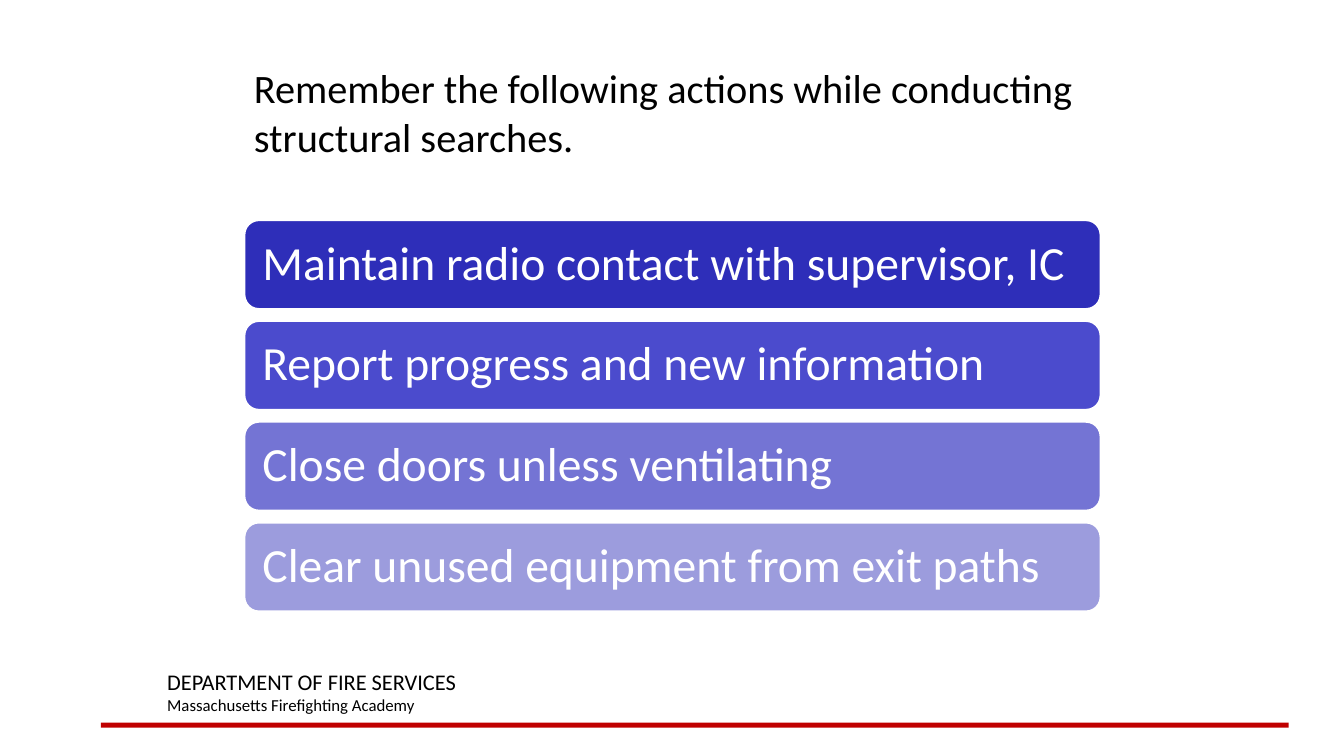
from pptx import Presentation
from pptx.dml.color import RGBColor
from pptx.enum.shapes import MSO_SHAPE
from pptx.enum.text import MSO_ANCHOR, PP_ALIGN
from pptx.util import Inches, Pt

FONT = "Calibri"
COLORS = {"text": "000000", "white": "FFFFFF", "rule": "C00000"}

# Action bars: one column, evenly spaced rows
LEFT, TOP, WIDTH, HEIGHT, PITCH = 2.42, 2.18, 8.5, 0.89, 1.0
ACTIONS = [
    ("Maintain radio contact with supervisor, IC", "2E2EB9"),
    ("Report progress and new information", "4B4BCD"),
    ("Close doors unless ventilating", "7474D4"),
    ("Clear unused equipment from exit paths", "9C9CDD"),
]


def rgb(value):
    return RGBColor.from_string(value)


def style(p, size, color):
    p.font.name = FONT
    p.font.size = Pt(size)
    p.font.color.rgb = rgb(color)


def add_text(s, box, lines):
    """Place a text box with one (text, size) pair per paragraph."""
    tf = s.shapes.add_textbox(*map(Inches, box)).text_frame
    tf.word_wrap = True
    for i, (text, size) in enumerate(lines):
        p = tf.add_paragraph() if i else tf.paragraphs[0]
        p.text = text
        style(p, size, COLORS["text"])


def add_block(s, kind, box, fill):
    sp = s.shapes.add_shape(kind, *map(Inches, box))
    sp.shadow.inherit = False
    sp.fill.solid()
    sp.fill.fore_color.rgb = rgb(fill)
    sp.line.fill.background()
    return sp


def add_action(s, row, text, fill):
    box = (LEFT, TOP + row * PITCH, WIDTH, HEIGHT)
    sp = add_block(s, MSO_SHAPE.ROUNDED_RECTANGLE, box, fill)
    sp.line.color.rgb = rgb(COLORS["white"])
    sp.line.width = Pt(2)
    tf = sp.text_frame
    tf.word_wrap = True
    tf.vertical_anchor = MSO_ANCHOR.MIDDLE
    tf.margin_left = tf.margin_right = Inches(0.14)
    tf.margin_top = tf.margin_bottom = 0
    p = tf.paragraphs[0]
    p.text = text
    p.alignment = PP_ALIGN.LEFT
    p.line_spacing = 0.9
    style(p, 34, COLORS["white"])


def main():
    prs = Presentation()
    prs.slide_width, prs.slide_height = Inches(13.33), Inches(7.5)
    s = prs.slides.add_slide(prs.slide_layouts[6])

    # Footer
    add_block(s, MSO_SHAPE.RECTANGLE, (1, 7.17, 11.78, 0.05), COLORS["rule"])
    add_text(s, (1.56, 6.58, 5.67, 0.57), [
        ("DEPARTMENT OF FIRE SERVICES", 16),
        ("Massachusetts Firefighting Academy", 12),
    ])

    # Actions
    for row, (text, fill) in enumerate(ACTIONS):
        add_action(s, row, text, fill)

    # Title
    add_text(s, (LEFT, 0.58, 9.25, 0.92), [
        ("Remember the following actions while conducting structural searches.", 28.8),
    ])

    prs.save("out.pptx")


if __name__ == "__main__":
    main()
